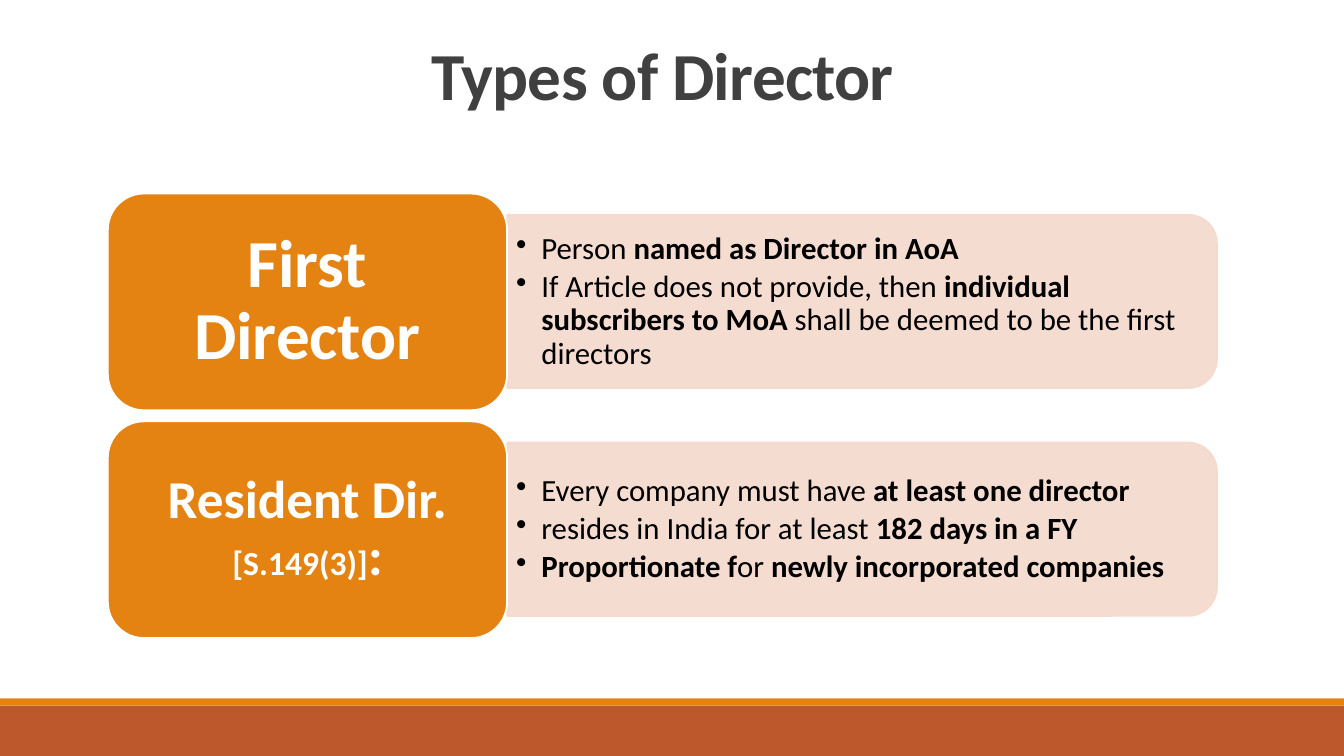
"""Build the "Types of Director" slide with two labelled bullet panels."""
from pptx import Presentation
from pptx.dml.color import RGBColor
from pptx.enum.shapes import MSO_SHAPE
from pptx.enum.text import MSO_ANCHOR, MSO_AUTO_SIZE, PP_ALIGN
from pptx.oxml.ns import qn
from pptx.util import Inches, Pt
from lxml import etree

RECTANGLE = MSO_SHAPE.RECTANGLE
ROUNDED = MSO_SHAPE.ROUNDED_RECTANGLE
ROUNDED_TOP = MSO_SHAPE.ROUND_2_SAME_RECTANGLE
MIDDLE, BOTTOM = MSO_ANCHOR.MIDDLE, MSO_ANCHOR.BOTTOM
CENTER = PP_ALIGN.CENTER
NO_AUTOFIT = MSO_AUTO_SIZE.NONE

ORANGE = RGBColor(0xE4, 0x83, 0x12)
RUST = RGBColor(0xBD, 0x58, 0x2C)
PEACH = RGBColor(0xF5, 0xD9, 0xCC)
GRAY = RGBColor(0x40, 0x40, 0x40)
WHITE = RGBColor(0xFF, 0xFF, 0xFF)
BLACK = RGBColor(0, 0, 0)

FONT = "Calibri"
ROW_PITCH = 2.26
ROWS = [
    {
        "label": [("First Director", 48)],
        "insets": (0.2, 0.1),
        "bullets": [
            [("Person ", False), ("named as Director in AoA", True)],
            [("If Article does not provide, then ", False),
             ("individual subscribers to MoA", True),
             (" shall be deemed to be the first directors", False)],
        ],
    },
    {
        "label": [("Resident Dir. ", 38), ("[S.149(3)]", 24), (":", 38)],
        "insets": (0.16, 0.08),
        "bullets": [
            [("Every company must have ", False), ("at least one director", True)],
            [("resides in India for at least ", False), ("182 days in a FY", True)],
            [("Proportionate f", True), ("or ", False),
             ("newly incorporated companies", True)],
        ],
    },
]

deck = Presentation()
deck.slide_width = Inches(13.33)
deck.slide_height = Inches(7.5)
page = deck.slides.add_slide(deck.slide_layouts[5])


def add_block(kind, left, top, width, height, fill, line=None):
    block = page.shapes.add_shape(
        kind, Inches(left), Inches(top), Inches(width), Inches(height))
    block.shadow.inherit = False
    block.fill.solid()
    block.fill.fore_color.rgb = fill
    if line is None:
        block.line.fill.background()
    else:
        block.line.color.rgb = line
        block.line.width = Pt(1.25)
    return block


def style_span(span, size, color, bold):
    span.font.name = FONT
    span.font.size = Pt(size)
    span.font.color.rgb = color
    span.font.bold = bold


add_block(RECTANGLE, 0, 7, 13.33, 0.5, RUST)
add_block(RECTANGLE, 0, 6.93, 13.33, 0.07, ORANGE)

title = page.shapes.title
title.left, title.top = Inches(1.07), Inches(0.36)
title.width, title.height = Inches(11), Inches(0.82)
title.text_frame.text = "Types of Director"
title.text_frame.auto_size = NO_AUTOFIT
title.text_frame.vertical_anchor = BOTTOM
heading = title.text_frame.paragraphs[0]
heading.alignment = CENTER
heading.line_spacing = 0.85
style_span(heading.runs[0], 48, GRAY, True)
heading.runs[0].font._element.set("spc", "-50")

for index, row in enumerate(ROWS):
    offset = index * ROW_PITCH

    panel = add_block(ROUNDED_TOP, 7.69, -0.53 + offset, 1.72, 7.04, PEACH, PEACH)
    panel.rotation = 90
    for color in panel._element.spPr.iter(qn("a:srgbClr")):
        etree.SubElement(color, qn("a:alpha"), val="90000")

    box = page.shapes.add_textbox(
        Inches(5.03), Inches(2.22 + offset), Inches(6.96), Inches(1.55))
    frame = box.text_frame
    frame.word_wrap = True
    frame.vertical_anchor = MIDDLE
    frame.margin_left = frame.margin_right = Inches(0.09)
    frame.margin_top = frame.margin_bottom = Inches(0.05)
    for number, bullet in enumerate(row["bullets"]):
        para = frame.add_paragraph() if number else frame.paragraphs[0]
        para.level = 1
        para.line_spacing = 0.9
        para.space_after = Pt(3.3)
        properties = para._p.get_or_add_pPr()
        properties.set("marL", str(Inches(0.25)))
        properties.set("indent", str(Inches(-0.25)))
        etree.SubElement(properties, qn("a:buChar"), char="•")
        for text, bold in bullet:
            span = para.add_run()
            span.text = text
            style_span(span, 22, BLACK, bold)

    label = add_block(ROUNDED, 1.07, 1.92 + offset, 3.96, 2.15, ORANGE, WHITE)
    frame = label.text_frame
    frame.word_wrap = True
    frame.vertical_anchor = MIDDLE
    side, edge = row["insets"]
    frame.margin_left = frame.margin_right = Inches(side)
    frame.margin_top = frame.margin_bottom = Inches(edge)
    para = frame.paragraphs[0]
    para.alignment = CENTER
    para.line_spacing = 0.9
    for text, size in row["label"]:
        span = para.add_run()
        span.text = text
        style_span(span, size, WHITE, True)

deck.save("out.pptx")
